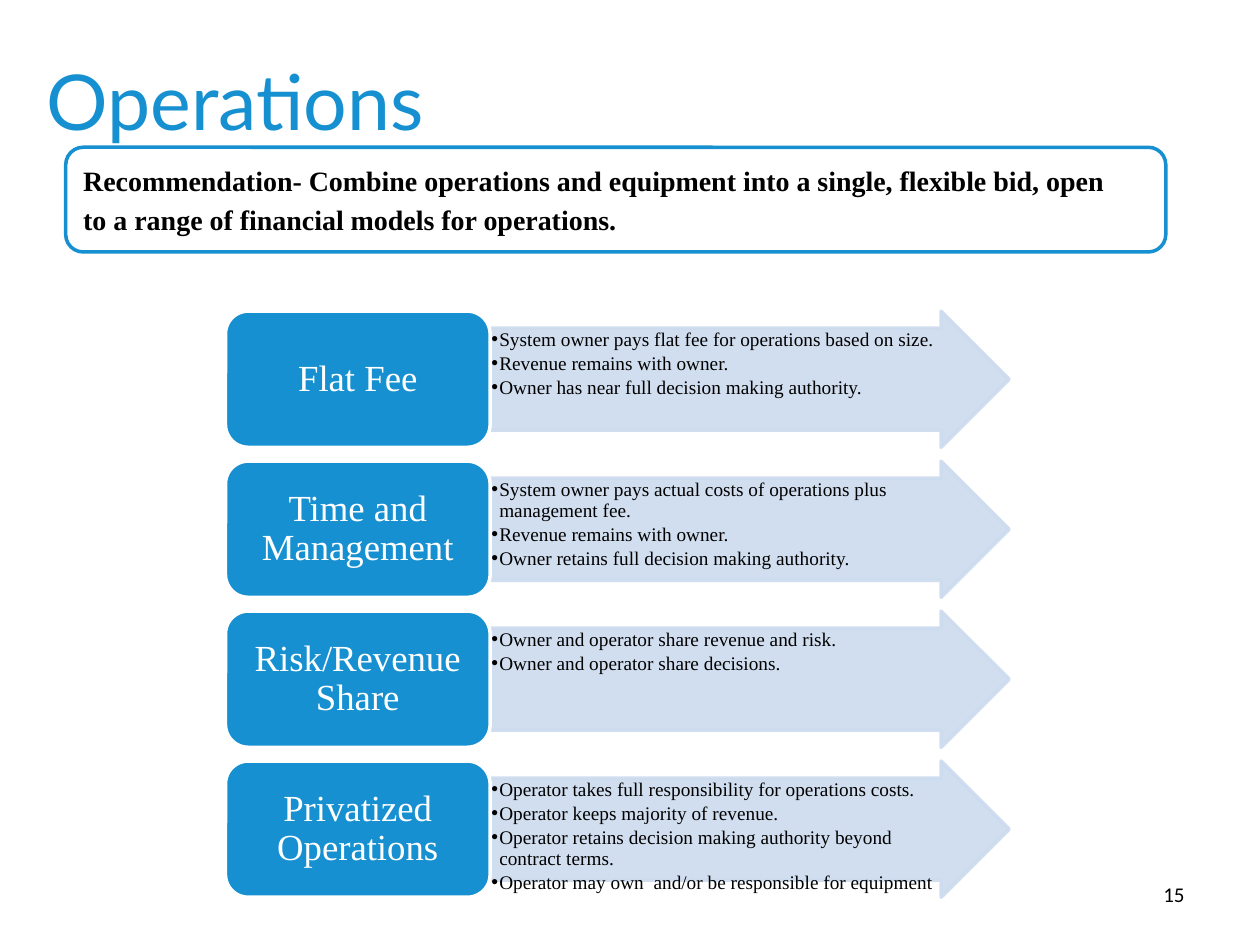
"""Build the Operations slide comparing four financial models."""
from lxml import etree
from pptx import Presentation
from pptx.dml.color import RGBColor
from pptx.enum.shapes import MSO_SHAPE
from pptx.enum.text import MSO_ANCHOR, MSO_AUTO_SIZE, PP_ALIGN
from pptx.oxml.ns import qn
from pptx.util import Pt

ROUND_RECT, RIGHT_ARROW = MSO_SHAPE.ROUNDED_RECTANGLE, MSO_SHAPE.RIGHT_ARROW
TOP, MIDDLE = MSO_ANCHOR.TOP, MSO_ANCHOR.MIDDLE
LEFT, CENTER, RIGHT = PP_ALIGN.LEFT, PP_ALIGN.CENTER, PP_ALIGN.RIGHT
NO_FIT = MSO_AUTO_SIZE.NONE

BLUE = RGBColor(0x16, 0x90, 0xD0)
PALE = RGBColor(0xCC, 0xDB, 0xEE)
WHITE = RGBColor(0xFF, 0xFF, 0xFF)
BLACK = RGBColor(0, 0, 0)
SERIF = "Times New Roman"

COMPARISON_LAYOUT = 4
ROW_TOP, ROW_PITCH, ROW_HEIGHT = 177.8, 85.7, 77.8
LABEL_LEFT, LABEL_WIDTH = 128.9, 151.2
ARROW_LEFT, ARROW_WIDTH = 280.1, 296.6
LIST_OFFSET, LIST_WIDTH, LIST_HEIGHT = 10, 267, 58.3

TITLE_FONT = {"name": "Lato", "size": Pt(44), "color": BLUE}
CALLOUT_FONT = {"name": SERIF, "size": Pt(16), "bold": True, "color": BLACK}
LABEL_FONT = {"name": SERIF, "size": Pt(21), "color": WHITE}
LIST_FONT = {"name": SERIF, "size": Pt(11), "bold": False, "color": BLACK}
NUMBER_FONT = {"name": "Calibri", "size": Pt(12), "color": BLACK}
LIST_PARA = {"level": 1, "alignment": LEFT, "line_spacing": 0.9,
             "space_before": Pt(0), "space_after": Pt(1.8)}

CALLOUT = [
    "Recommendation- Combine operations and equipment into a single, flexible bid, open",
    "to a range of financial models for operations.",
]
MODELS = [
    ("Flat Fee", [
        "System owner pays flat fee for operations based on size.",
        "Revenue remains with owner.",
        "Owner has near full decision making authority."]),
    ("Time and Management", [
        "System owner pays actual costs of operations plus management fee.",
        "Revenue remains with owner.",
        "Owner retains full decision making authority."]),
    ("Risk/Revenue Share", [
        "Owner and operator share revenue and risk.",
        "Owner and operator share decisions."]),
    ("Privatized Operations", [
        "Operator takes full responsibility for operations costs.",
        "Operator keeps majority of revenue.",
        "Operator retains decision making authority beyond contract terms.",
        "Operator may own  and/or be responsible for equipment"]),
]


def place(sp, left, top, width, height):
    """Move and size a shape, in points."""
    sp.left, sp.top, sp.width, sp.height = map(Pt, (left, top, width, height))


def set_attrs(obj, values):
    """Set each named value on an object."""
    for name, value in values.items():
        setattr(obj, name, value)


def write(sp, lines, font, para, anchor=TOP, margins=(7.2, 3.6)):
    """Fill a shape with formatted paragraphs."""
    tf = sp.text_frame
    side, end = map(Pt, margins)
    set_attrs(tf, {"word_wrap": True, "auto_size": NO_FIT, "vertical_anchor": anchor,
                   "margin_left": side, "margin_right": side,
                   "margin_top": end, "margin_bottom": end})
    for i, line in enumerate(lines):
        p = tf.paragraphs[0] if i == 0 else tf.add_paragraph()
        set_attrs(p, para)
        r = p.add_run()
        r.text = line
        set_attrs(r.font, {k: v for k, v in font.items() if k != "color"})
        r.font.color.rgb = font["color"]


def add_bullets(tf, indent):
    """Give every paragraph a hanging bullet."""
    for p in tf.paragraphs:
        props = p._p.get_or_add_pPr()
        props.set("marL", str(Pt(indent)))
        props.set("indent", str(-Pt(indent)))
        etree.SubElement(props, qn("a:buFont")).set("typeface", "Arial")
        etree.SubElement(props, qn("a:buChar")).set("char", "•")


def add_block(s, kind, box, fill, line):
    """Add a filled and outlined preset shape."""
    sp = s.shapes.add_shape(kind, *map(Pt, box))
    sp.shadow.inherit = False
    sp.fill.solid()
    sp.fill.fore_color.rgb = fill
    sp.line.color.rgb = line
    sp.line.width = Pt(2)
    return sp


def set_opacity(sp, percent):
    """Make the fill and outline of a shape partly transparent."""
    for color in sp._element.spPr.iter(qn("a:srgbClr")):
        etree.SubElement(color, qn("a:alpha")).set("val", str(percent * 1000))


def add_model(s, body, top, label, points):
    """Add one row: an arrow, its bullet list and its label."""
    arrow = add_block(s, RIGHT_ARROW, (ARROW_LEFT, top, ARROW_WIDTH, ROW_HEIGHT), PALE, PALE)
    arrow.adjustments[0], arrow.adjustments[1] = 0.75, 0.5
    set_opacity(arrow, 90)
    place(body, ARROW_LEFT, top + LIST_OFFSET, LIST_WIDTH, LIST_HEIGHT)
    write(body, points, LIST_FONT, LIST_PARA, margins=(0.7, 0.7))
    add_bullets(body.text_frame, 4.5)
    arrow._element.addnext(body._element)
    box = add_block(s, ROUND_RECT, (LABEL_LEFT, top, LABEL_WIDTH, ROW_HEIGHT), BLUE, WHITE)
    write(box, [label], LABEL_FONT, {"alignment": CENTER, "line_spacing": 0.9},
          MIDDLE, (6.5, 2.9))


def main():
    """Build and save the slide."""
    prs = Presentation()
    prs.slide_width, prs.slide_height = Pt(720), Pt(540)
    s = prs.slides.add_slide(prs.slide_layouts[COMPARISON_LAYOUT])
    title, *bodies = s.placeholders
    place(title, 19.4, 12.2, 648, 90)
    write(title, ["Operations"], TITLE_FONT, {"alignment": LEFT}, MIDDLE)
    number = s.shapes.add_textbox(Pt(516), Pt(500.4), Pt(168), Pt(28.8))
    write(number, ["15"], NUMBER_FONT, {"alignment": RIGHT})
    for i, (body, (label, points)) in enumerate(zip(bodies, MODELS)):
        add_model(s, body, ROW_TOP + i * ROW_PITCH, label, points)
    callout = add_block(s, ROUND_RECT, (37.6, 84.2, 628.6, 59.8), WHITE, BLUE)
    write(callout, CALLOUT, CALLOUT_FONT, {"alignment": LEFT, "line_spacing": 1.15})
    prs.save("out.pptx")


if __name__ == "__main__":
    main()
